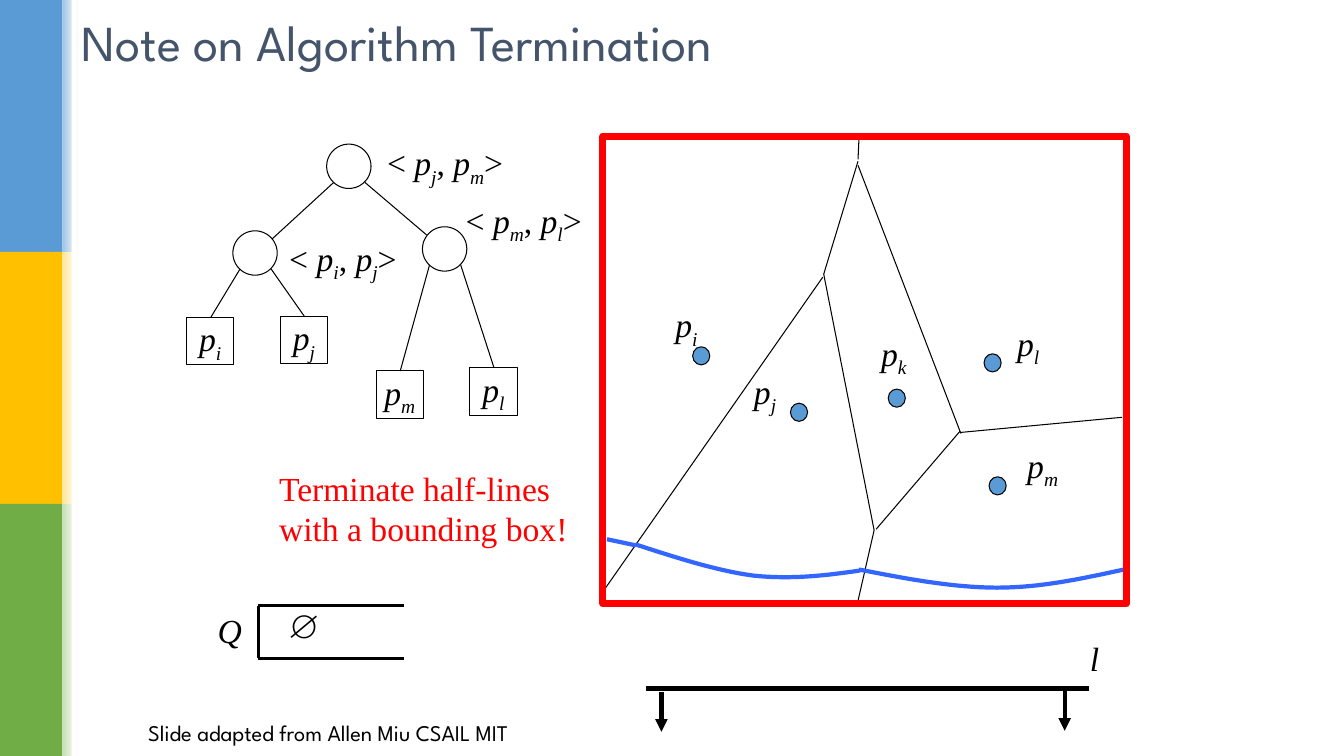
import dataclasses

import lxml.etree
import pptx
import pptx.dml.color
import pptx.enum.shapes
import pptx.enum.text
import pptx.oxml.ns
import pptx.util

PX = 9144
COLORS = {
    "black": "000000", "white": "FFFFFF", "red": "FF0000", "title": "44546A",
    "blue": "5B9BD5", "yellow": "FFC000", "green": "70AD47", "beach": "3366FF",
    "pale blue": "9DC3E6", "pale yellow": "FFE699", "pale green": "C5E0B4",
}
SERIF, SANS = "Times New Roman", "League Spartan"
SHAPE = pptx.enum.shapes.MSO_SHAPE
ALIGN = pptx.enum.text.PP_ALIGN
ANCHOR = pptx.enum.text.MSO_ANCHOR
AUTO_SIZE = pptx.enum.text.MSO_AUTO_SIZE


@dataclasses.dataclass
class Box:
    """A region in px that turns inner coordinates into slide coordinates."""
    left: int
    top: int
    width: int
    height: int

    def point(self, x, y):
        """Return an inner point in EMU."""
        return (self.left + x) * PX, (self.top + y) * PX

    def area(self, x, y, width, height):
        """Return an inner rectangle in EMU."""
        return *self.point(x, y), width * PX, height * PX


def color(name):
    """Return the named colour."""
    return pptx.dml.color.RGBColor.from_string(COLORS[name])


def site(index):
    """Return the runs of p with a subscript."""
    return [("p", "italic"), (index, "subscript")]


def pair(first, second):
    """Return the runs of a breakpoint tuple."""
    return [("< ", ""), *site(first), (", ", ""), *site(second), (">", "")]


def write(shape, text, font=SERIF, size=24, ink="black", align=ALIGN.LEFT,
          anchor=ANCHOR.TOP, wrap=False, grow=False):
    """Write a string or a list of styled runs into a shape."""
    frame = shape.text_frame
    frame.word_wrap = wrap
    frame.auto_size = AUTO_SIZE.SHAPE_TO_FIT_TEXT if grow else AUTO_SIZE.NONE
    frame.vertical_anchor = anchor
    paragraph = frame.paragraphs[0]
    paragraph.alignment = align
    for content, style in [(text, "")] if isinstance(text, str) else text:
        for number, line in enumerate(content.split("\n")):
            if number:
                paragraph.add_line_break()
            run = paragraph.add_run()
            run.text = line
            run.font.name, run.font.size = font, pptx.util.Pt(size)
            run.font.italic = style != ""
            run.font.color.rgb = color(ink)
            if style == "subscript":
                run._r.get_or_add_rPr().set("baseline", "-25000")


def label(slide, area, text, **text_format):
    """Add a text box that fits its text."""
    write(slide.shapes.add_textbox(*area), text, **{"grow": True, **text_format})


def outline(shape, ink, weight):
    """Set the line of a shape or connector."""
    shape.line.color.rgb = color(ink)
    shape.line.width = pptx.util.Pt(weight)


def draw(slide, kind, area, fill=None, ink=None, weight=0.75):
    """Add a preset shape with an optional fill and line."""
    shape = slide.shapes.add_shape(kind, *area)
    shape.shadow.inherit = False
    if fill:
        shape.fill.solid()
        shape.fill.fore_color.rgb = color(fill)
    else:
        shape.fill.background()
    if ink:
        outline(shape, ink, weight)
    else:
        shape.line.fill.background()
    return shape


def connect(slide, start, end, weight=0.75, arrow=False):
    """Add a straight black line, with an arrowhead at its end on request."""
    straight = pptx.enum.shapes.MSO_CONNECTOR.STRAIGHT
    connector = slide.shapes.add_connector(straight, *start, *end)
    outline(connector, "black", weight)
    qn = pptx.oxml.ns.qn
    if arrow:
        line = connector.line._get_or_add_ln()
        lxml.etree.SubElement(line, qn("a:tailEnd"), type="triangle")
    lxml.etree.SubElement(connector._element.spPr, qn("a:effectLst"))


def bezier(start, first, second, end, steps=16):
    """Return points along a cubic curve, without its start."""
    weights = [((1 - t) ** 3, 3 * t * (1 - t) ** 2, 3 * t * t * (1 - t), t ** 3)
               for t in (step / steps for step in range(1, steps + 1))]
    return [tuple(sum(w * p[axis] for w, p in zip(row, (start, first, second, end)))
                  for axis in (0, 1)) for row in weights]


def draw_beach(slide, points):
    """Add a stretch of the beach line through chained cubic curves."""
    builder = slide.shapes.build_freeform(*points[0])
    curve = []
    for index in range(0, len(points) - 1, 3):
        curve += bezier(*points[index:index + 4])
    builder.add_line_segments(curve, close=False)
    shape = builder.convert_to_shape()
    shape.shadow.inherit = False
    shape.fill.background()
    outline(shape, "beach", 3)


def add_sidebar(slide, box):
    """Add three colour bands with a fading edge."""
    height = box.height // 3
    for row, name in enumerate(("blue", "yellow", "green")):
        draw(slide, SHAPE.RECTANGLE, box.area(0, row * height, 62, height), name)
        edge = draw(slide, SHAPE.RECTANGLE, box.area(62, row * height, 16, height))
        edge.fill.gradient()
        edge.fill.gradient_angle = 0
        for stop, shade in zip(edge.fill.gradient_stops, ("pale " + name, "white")):
            stop.color.rgb = color(shade)
    draw(slide, SHAPE.RECTANGLE, box.area(71, 0, 5, box.height), "white")


def add_title(slide, box):
    """Place and format the title."""
    title = slide.shapes.title
    title.left, title.top, title.width, title.height = box.area(0, 0, box.width, box.height)
    write(title, "Note on Algorithm Termination", font=SANS, size=36, ink="title",
          anchor=ANCHOR.MIDDLE, wrap=True)


def add_tree(slide, box):
    """Add the binary tree of breakpoints and sites."""
    inner = {"jm": (139, 7), "ij": (46, 93), "ml": (234, 89)}
    leaves = {"i": (0, 179), "j": (93, 178), "m": (188, 232), "l": (281, 229)}
    children = {"jm": ("ij", "ml"), "ij": "ij", "ml": "ml"}
    for parent, (x, y) in inner.items():
        draw(slide, SHAPE.OVAL, box.area(x, y, 44, 44), ink="black")
        for child, start_x, end_x in zip(children[parent], (7, 38), (39, 4)):
            if child in leaves:
                end = leaves[child][0] + 24, leaves[child][1]
            else:
                end = inner[child][0] + end_x, inner[child][1] + 8
            connect(slide, box.point(x + start_x, y + 38), box.point(*end))
    for index, (x, y) in leaves.items():
        leaf = draw(slide, SHAPE.RECTANGLE, box.area(x, y, 47, 47), ink="black")
        write(leaf, site(index), align=ALIGN.CENTER, anchor=ANCHOR.MIDDLE)
    for name, x, y, width in (("jm", 189, 0, 138), ("ij", 92, 95, 128), ("ml", 267, 57, 138)):
        label(slide, box.area(x, y, width, 50), pair(*name))


def add_diagram(slide, box):
    """Add the Voronoi diagram inside its bounding box."""
    sites = {"i": (89, 209, 62, 162, 43), "j": (186, 265, 140, 228, 43),
             "k": (283, 251, 266, 190, 47), "l": (378, 216, 401, 180, 43),
             "m": (383, 338, 411, 301, 53)}
    for index, (x, y, label_x, label_y, width) in sites.items():
        draw(slide, SHAPE.OVAL, box.area(x, y, 17, 18), "blue", "black")
        label(slide, box.area(label_x, label_y, width, 50), site(index))
    edges = ((0, 452, 218, 140), (219, 137, 269, 391), (354, 293, 271, 390),
             (355, 294, 515, 279), (253, 29, 355, 295), (253, 25, 219, 137),
             (269, 391, 253, 461), (253, 23, 254, 2))
    for x1, y1, x2, y2 in edges:
        connect(slide, box.point(x1, y1), box.point(x2, y2))
    beach = (((4, 400), (18, 403), (32, 406), (32, 406)),
             ((32, 405), (72, 418), (112, 431), (149, 436), (186, 440), (221, 436), (255, 431)),
             ((254, 430), (300, 439), (347, 448), (391, 448), (435, 448), (475, 439), (517, 430)))
    for points in beach:
        draw_beach(slide, [box.point(*point) for point in points])
    draw(slide, SHAPE.RECTANGLE, box.area(0, 0, box.width, box.height), ink="red", weight=5)


def add_queue(slide, box):
    """Add the empty event queue."""
    for x1, y1, x2, y2 in ((50, 6, 195, 6), (50, 58, 195, 58), (50, 6, 50, 58)):
        connect(slide, box.point(x1, y1), box.point(x2, y2), weight=2)
    label(slide, box.area(0, 5, 44, 50), [("Q", "italic")])
    label(slide, box.area(69, 0, 48, 50), "∅")


def add_sweep_line(slide, box):
    """Add the sweep line with its downward arrows."""
    connect(slide, box.point(0, 55), box.point(box.width, 55), weight=3)
    for x, y in ((15, 59), (415, 58)):
        connect(slide, box.point(x, y), box.point(x, y + 39), weight=3, arrow=True)
    label(slide, box.area(430, 0, 29, 50), [("l", "italic")])


def main():
    """Build and save the slide."""
    presentation = pptx.Presentation()
    presentation.slide_width, presentation.slide_height = 1333 * PX, 750 * PX
    slide = presentation.slides.add_slide(presentation.slide_layouts[5])
    add_sidebar(slide, Box(0, 0, 78, 750))
    add_title(slide, Box(71, 0, 1243, 83))
    add_tree(slide, Box(185, 136, 405, 279))
    add_diagram(slide, Box(598, 135, 519, 464))
    add_queue(slide, Box(206, 595, 195, 58))
    add_sweep_line(slide, Box(641, 628, 439, 98))
    label(slide, Box(267, 459, 306, 90).area(0, 0, 306, 90),
          "Terminate half-lines \nwith a bounding box!", ink="red")
    label(slide, Box(75, 703, 501, 47).area(0, 0, 501, 47),
          "Slide adapted from Allen Miu CSAIL MIT", font=SANS, size=16,
          align=ALIGN.CENTER, anchor=ANCHOR.MIDDLE, wrap=True, grow=False)
    presentation.save("out.pptx")


if __name__ == "__main__":
    main()
